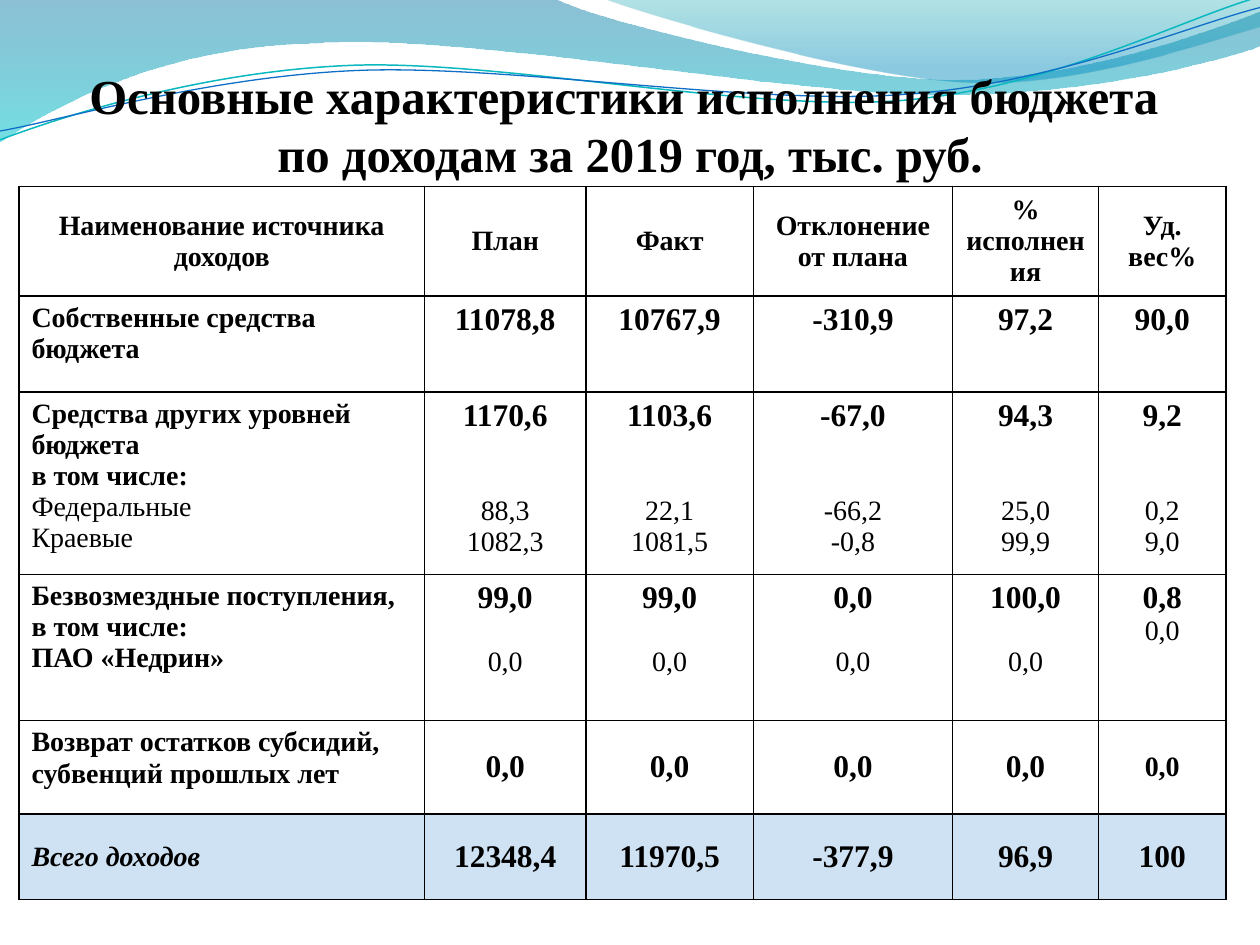
from lxml.etree import SubElement
from pptx import Presentation
from pptx.dml.color import RGBColor
from pptx.enum.text import MSO_ANCHOR as Anchor, PP_ALIGN as Align
from pptx.oxml import parse_xml
from pptx.oxml.ns import nsdecls, qn
from pptx.util import Inches, Pt

COLORS = {
    "text": "000000", "border": "000000", "total": "0F6FC6",
    "deep_blue": "0074A1", "aqua": "00C6CF", "teal": "00A1A9", "sky": "008BBF",
    "teal_line": "0AB8BF", "blue_line": "0F6FC6",
}
FONT = "Times New Roman"
TITLE = "Основные характеристики исполнения бюджета \vпо доходам за 2019 год, тыс. руб."

# Outline steps: two numbers are a straight line, six are a cubic curve.
# Gradient stops run from top to bottom: position, colour, opacity in percent.
WAVES = [
    {"start": (0, 0),
     "steps": [(4.4, -0.01), (4.76, 0.17, 6.64, 0.63, 7.58, 0.63),
               (8.53, 0.63, 9.58, 0.26, 10, 0.09), (10.01, 0.36),
               (9.83, 0.44, 8.7, 0.76, 7.46, 0.75), (6.22, 0.75, 3.82, 0.28, 2.57, 0.34),
               (1.29, 0.36, 0.46, 0.83, -0.01, 1.13)],
     "stops": [(0, "deep_blue", 45), (1, "aqua", 55)]},
    {"start": (4.79, -0.01),
     "steps": [(5.09, 0.11, 6.82, 0.62, 7.69, 0.65), (8.56, 0.69, 9.61, 0.32, 10, 0.21),
               (10, 0)],
     "stops": [(0, "teal", 30), (0.8, "sky", 45)]},
    {"start": (0, 1.11),
     "steps": [(0.48, 0.93, 1.58, 0.57, 2.77, 0.52), (3.95, 0.47, 5.93, 0.89, 7.13, 0.8),
               (8.33, 0.71, 9.38, 0.15, 9.98, -0.02)],
     "line": ("teal_line", 0.85)},
    {"start": (0, 1.04),
     "steps": [(0.47, 0.96, 1.64, 0.61, 2.83, 0.56), (4.03, 0.51, 5.97, 0.84, 7.17, 0.75),
               (8.36, 0.67, 9.41, 0.21, 10, 0.06)],
     "line": ("blue_line", 0.75)},
]

# Text styles: size, bold, italic
STYLES = {
    "label": (16, True, False), "detail": (16, False, False),
    "value": (18, True, False), "total": (16, True, True),
}
TABLE_LEFT, TABLE_TOP = 0.15, 1.48
COLUMN_WIDTHS = [3.22, 1.28, 1.33, 1.58, 1.16, 1.01]
ROW_HEIGHTS = [0.87, 0.76, 1.45, 1.16, 0.74, 0.68]
DETAIL_LINE = 17.8  # points

HEADERS = ["Наименование источника доходов", "План", "Факт", "Отклонение от плана",
           "%\nисполнения", "Уд. вес%"]
# Each value is a main figure with its detail figures below;
# "gaps" is the number of detail lines left open between them, by column.
ROWS = [
    {"label": [("Собственные средства бюджета", "label")],
     "values": ["11078,8", "10767,9", "-310,9", "97,2", "90,0"]},
    {"label": [("Средства других уровней бюджета", "label"), ("в том числе:", "label"),
               ("Федеральные", "detail"), ("Краевые", "detail")],
     "values": ["1170,6\n88,3\n1082,3", "1103,6\n22,1\n1081,5", "-67,0\n-66,2\n-0,8",
                "94,3\n25,0\n99,9", "9,2\n0,2\n9,0"],
     "gaps": [2, 2, 2, 2, 2]},
    {"label": [("Безвозмездные поступления, в том числе:", "label"),
               ("ПАО «Недрин»", "label")],
     "values": ["99,0\n0,0", "99,0\n0,0", "0,0\n0,0", "100,0\n0,0", "0,8\n0,0"],
     "gaps": [1, 1, 1, 1, 0]},
    {"label": [("Возврат остатков субсидий, субвенций прошлых лет", "label")],
     "values": ["0,0"] * 5, "value_anchor": Anchor.MIDDLE, "last_style": "label"},
    {"label": [("Всего доходов", "total")],
     "values": ["12348,4", "11970,5", "-377,9", "96,9", "100"],
     "label_anchor": Anchor.MIDDLE, "value_anchor": Anchor.MIDDLE, "fill": "total"},
]


def rgb(name):
    return RGBColor.from_string(COLORS[name])


def set_opacity(parent, percent):
    for color in parent.iter(qn("a:srgbClr")):
        SubElement(color, qn("a:alpha")).set("val", str(percent * 1000))


def bend_segments(shape, steps):
    """Turn the straight segments of six-number steps into cubic curves."""
    segments = list(shape.element.iter(qn("a:lnTo")))
    for segment, step in zip(segments, steps):
        if len(step) == 2:
            continue
        segment.tag = qn("a:cubicBezTo")
        for i, (x, y) in enumerate((step[:2], step[2:4])):
            control = segment.makeelement(qn("a:pt"), {
                "x": str(Inches(x) - shape.left), "y": str(Inches(y) - shape.top)})
            segment.insert(i, control)


def add_wave(slide, wave):
    ends = [wave["start"]] + [step[-2:] for step in wave["steps"]]
    start, *others = [(Inches(x), Inches(y)) for x, y in ends]
    builder = slide.shapes.build_freeform(*start)
    builder.add_line_segments(others, close="stops" in wave)
    shape = builder.convert_to_shape()
    bend_segments(shape, wave["steps"])
    shape.shadow.inherit = False
    if "line" in wave:
        color, width = wave["line"]
        shape.fill.background()
        shape.line.color.rgb = rgb(color)
        shape.line.width = Pt(width)
        return
    shape.line.fill.background()
    shape.fill.gradient()
    shape.fill.gradient_angle = 270
    gradient = shape.element.spPr.find(qn("a:gradFill"))
    stops = zip(shape.fill.gradient_stops, gradient.iter(qn("a:gs")), wave["stops"])
    for stop, element, (position, color, opacity) in stops:
        stop.position = position
        stop.color.rgb = rgb(color)
        set_opacity(element, opacity)


def format_paragraph(paragraph, size, bold, italic, align):
    paragraph.alignment = align
    for run in paragraph.runs:
        font = run.font
        font.name, font.size, font.bold, font.italic = FONT, Pt(size), bold, italic
        font.color.rgb = rgb("text")


def fill_cell(cell, lines, align, anchor, fill=None, gap=0):
    """Write (text, style) lines; gap is the open detail lines above the second one."""
    cell.vertical_anchor = anchor
    cell.text_frame.text = "\n".join(text for text, _ in lines)
    for i, (paragraph, (_, style)) in enumerate(zip(cell.text_frame.paragraphs, lines)):
        format_paragraph(paragraph, *STYLES[style], align)
        if i == 1 and gap:
            paragraph.space_before = Pt(gap * DETAIL_LINE)
    properties = cell._tc.get_or_add_tcPr()
    if fill:
        cell.fill.solid()
        cell.fill.fore_color.rgb = rgb(fill)
        set_opacity(properties, 20)
    else:
        cell.fill.background()
    for i, side in enumerate("LRTB"):
        properties.insert(i, parse_xml(
            f'<a:ln{side} {nsdecls("a")} w="12700"><a:solidFill>'
            f'<a:srgbClr val="{COLORS["border"]}"/></a:solidFill></a:ln{side}>'))


def add_income_table(slide):
    frame = slide.shapes.add_table(
        len(ROW_HEIGHTS), len(COLUMN_WIDTHS), Inches(TABLE_LEFT), Inches(TABLE_TOP),
        Inches(sum(COLUMN_WIDTHS)), Inches(sum(ROW_HEIGHTS)))
    table = frame.table
    table.first_row = table.horz_banding = False
    for column, width in zip(table.columns, COLUMN_WIDTHS):
        column.width = Inches(width)
    for row, height in zip(table.rows, ROW_HEIGHTS):
        row.height = Inches(height)

    for c, header in enumerate(HEADERS):
        lines = [(text, "label") for text in header.split("\n")]
        fill_cell(table.cell(0, c), lines, Align.CENTER, Anchor.MIDDLE)
    for r, row in enumerate(ROWS, 1):
        fill = row.get("fill")
        fill_cell(table.cell(r, 0), row["label"], Align.LEFT,
                  row.get("label_anchor", Anchor.TOP), fill)
        gaps = row.get("gaps", [0] * len(row["values"]))
        for c, (value, gap) in enumerate(zip(row["values"], gaps), 1):
            main_figure, *details = value.split("\n")
            is_last = c == len(row["values"])
            style = row.get("last_style", "value") if is_last else "value"
            lines = [(main_figure, style)] + [(text, "detail") for text in details]
            fill_cell(table.cell(r, c), lines, Align.CENTER,
                      row.get("value_anchor", Anchor.TOP), fill, gap)


def add_title(slide):
    box = slide.shapes.add_textbox(Inches(0.39), Inches(0.47), Inches(9.22), Inches(0.98))
    frame = box.text_frame
    frame.word_wrap = True
    frame.vertical_anchor = Anchor.BOTTOM
    frame.margin_left = frame.margin_right = frame.margin_bottom = 0
    frame.text = TITLE
    format_paragraph(frame.paragraphs[0], 27.9, True, False, Align.CENTER)


def main():
    deck = Presentation()
    deck.slide_width, deck.slide_height = Inches(10), Inches(7.5)
    slide = deck.slides.add_slide(deck.slide_layouts[6])
    for wave in WAVES:
        add_wave(slide, wave)
    add_income_table(slide)
    add_title(slide)
    deck.save("out.pptx")


if __name__ == "__main__":
    main()
